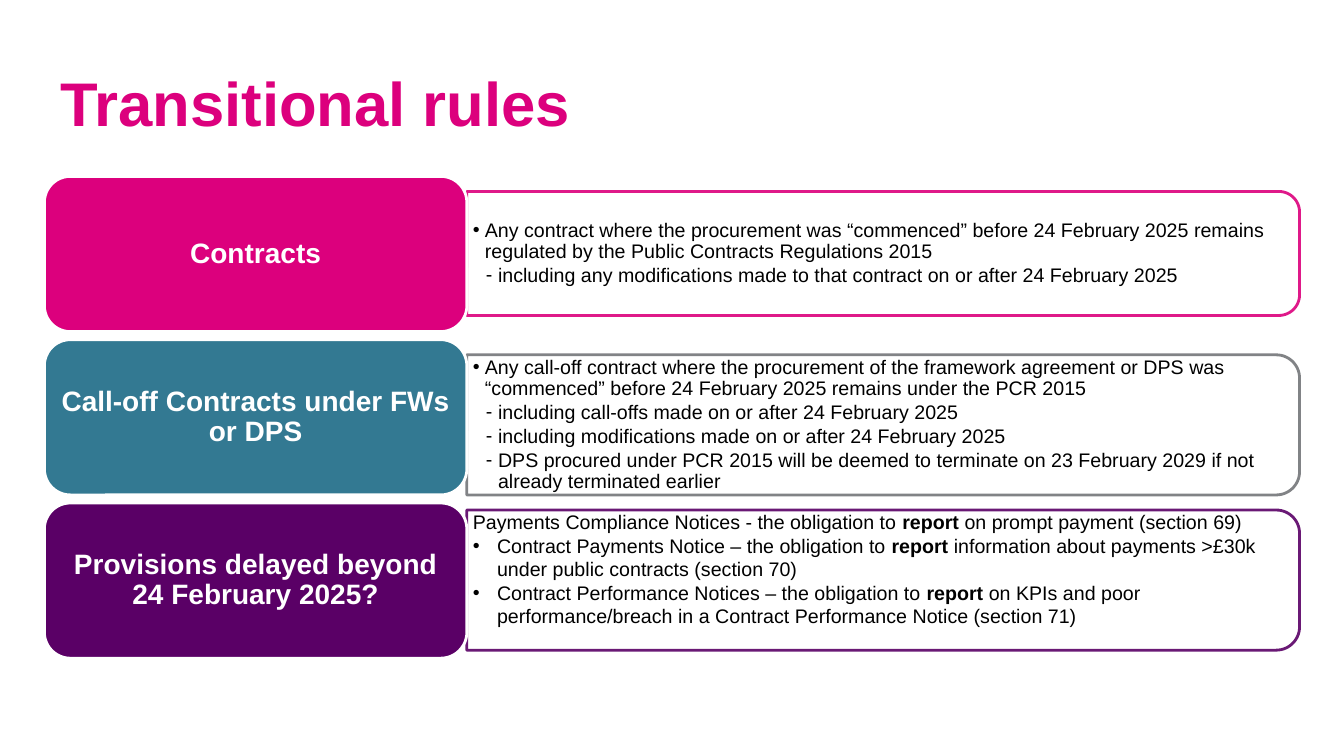
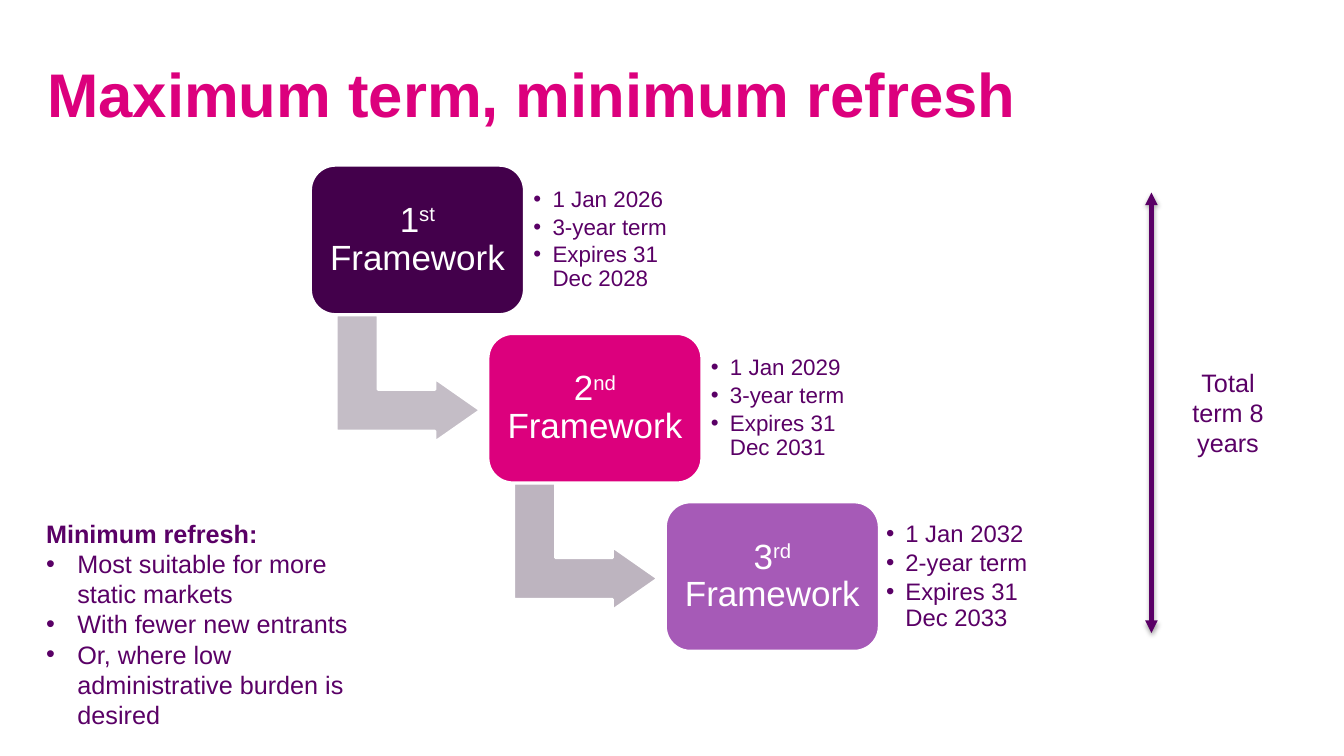
"""Build two slides on transitional rules and framework terms."""
import math

import lxml.etree
import pptx
import pptx.dml.color
import pptx.enum.shapes
import pptx.enum.text
import pptx.oxml.ns
import pptx.util

Inches = pptx.util.Inches
Pt = pptx.util.Pt
RGBColor = pptx.dml.color.RGBColor
SHAPE = pptx.enum.shapes.MSO_SHAPE
ALIGN = pptx.enum.text.PP_ALIGN
ANCHOR = pptx.enum.text.MSO_ANCHOR
qn = pptx.oxml.ns.qn

PINK = RGBColor(0xDC, 0x00, 0x7D)
TEAL = RGBColor(0x33, 0x79, 0x92)
PURPLE = RGBColor(0x5A, 0x00, 0x66)
DARK_PURPLE = RGBColor(0x43, 0x00, 0x4B)
LILAC = RGBColor(0xA6, 0x5A, 0xB7)
GREY = RGBColor(0x74, 0x76, 0x79)
ARROW_GREY = RGBColor(0xC4, 0xBD, 0xC6)
ARROW_MAUVE = RGBColor(0xBD, 0xB4, 0xBF)
WHITE = RGBColor(0xFF, 0xFF, 0xFF)
BLACK = RGBColor(0, 0, 0)

FONT = "Arial"
PLAIN = None
DOT = ("•", 0.12, 0.12)
DASH = ("-", 0.25, 0.12)
WIDE_DOT = ("•", 0.24, 0.24)
TERM_DOT = ("•", 0.19, 0.19)
NOTE_DOT = ("•", 0.31, 0.31)


def set_values(target, values):
    """Set each named attribute of the target."""
    for name, value in values.items():
        setattr(target, name, value)


def add_child(parent, tag, **attributes):
    """Append an XML element and return it."""
    return lxml.etree.SubElement(parent, qn(tag), attributes)


def add_bullet(para, bullet):
    """Give a paragraph a hanging bullet mark."""
    mark, margin, hang = bullet
    properties = para._p.get_or_add_pPr()
    properties.set("marL", str(Inches(margin)))
    properties.set("indent", str(-Inches(hang)))
    add_child(properties, "a:buFont", typeface=FONT)
    add_child(properties, "a:buChar", char=mark)


def write(box, lines, size, color, bold=False, superscript=False,
          insets=(0.1, 0.05, 0.1, 0.05), anchor=ANCHOR.MIDDLE, **layout):
    """Write (text, bullet) lines, with accented spans between bars."""
    frame = box.text_frame
    sides = ("margin_left", "margin_top", "margin_right", "margin_bottom")
    set_values(frame, dict(zip(sides, map(Inches, insets))))
    set_values(frame, {"word_wrap": True, "vertical_anchor": anchor})
    for index, (text, bullet) in enumerate(lines):
        para = frame.add_paragraph() if index else frame.paragraphs[0]
        set_values(para, {"alignment": ALIGN.LEFT, **layout})
        if bullet:
            add_bullet(para, bullet)
        for order, piece in enumerate(text.split("|")):
            if not piece:
                continue
            accented = order % 2 == 1
            span = para.add_run()
            span.text = piece
            set_values(span.font, {
                "name": FONT, "size": Pt(size),
                "bold": bold or (accented and not superscript)})
            span.font.color.rgb = color
            if accented and superscript:
                span._r.get_or_add_rPr().set("baseline", "30000")


def add_text(page, area, lines, size, color, **options):
    """Add a text box."""
    box = page.shapes.add_textbox(*map(Inches, area))
    write(box, lines, size, color, **options)


def add_title(page, text, left, top):
    """Add the slide title."""
    add_text(page, (left, top, 12, 0.84), [(text, PLAIN)], 44, PINK, bold=True)


def add_block(page, kind, area, fill, adjustments):
    """Add a filled shape with a white outline."""
    block = page.shapes.add_shape(kind, *map(Inches, area))
    block.shadow.inherit = False
    block.fill.solid()
    block.fill.fore_color.rgb = fill
    block.line.color.rgb = WHITE
    block.line.width = Pt(2)
    for index, value in enumerate(adjustments):
        block.adjustments[index] = value
    return block


def add_label(page, area, fill, text, size, insets, **options):
    """Add a rounded box with a centred caption."""
    label = add_block(page, SHAPE.ROUNDED_RECTANGLE, area, fill, [0.167])
    write(label, [(text, PLAIN)], size, WHITE, insets=insets,
          alignment=ALIGN.CENTER, line_spacing=0.9, **options)


def add_panel(page, area, color, lines, **options):
    """Add an outlined panel with rounded right corners."""
    left, top, width, height = area
    right, bottom, radius = left + width, top + height, height / 6
    points = [(left, top)]
    for corner, start in ((top + radius, -90), (bottom - radius, 0)):
        for step in range(0, 91, 6):
            angle = math.radians(start + step)
            points.append((right - radius + radius * math.cos(angle),
                           corner + radius * math.sin(angle)))
    points.append((left, bottom))
    points = [(Inches(x), Inches(y)) for x, y in points]
    builder = page.shapes.build_freeform(*points[0])
    builder.add_line_segments(points[1:], close=True)
    panel = builder.convert_to_shape()
    panel.shadow.inherit = False
    panel.fill.background()
    panel.line.color.rgb = color
    panel.line.width = Pt(2)
    outline = panel.element.spPr.find(qn("a:ln"))
    add_child(outline.find(".//" + qn("a:srgbClr")), "a:alpha", val="90000")
    write(panel, lines, 14, BLACK, insets=(0.06, 0, 0.12, 0), **options)


def add_span_arrow(page, x, top, bottom):
    """Add a vertical arrow with two heads and a soft shadow."""
    arrow = page.shapes.add_connector(
        pptx.enum.shapes.MSO_CONNECTOR.STRAIGHT,
        Inches(x), Inches(top), Inches(x), Inches(bottom))
    arrow.line.color.rgb = PURPLE
    arrow.line.width = Pt(3)
    properties = arrow.element.spPr
    outline = properties.find(qn("a:ln"))
    for end in ("a:headEnd", "a:tailEnd"):
        add_child(outline, end, type="triangle")
    shadow = add_child(
        add_child(properties, "a:effectLst"), "a:outerShdw",
        blurRad=str(Pt(3.1)), dist=str(Pt(1.8)), dir="5400000",
        rotWithShape="0")
    tint = add_child(shadow, "a:srgbClr", val="000000")
    add_child(tint, "a:alpha", val="35000")


def build_rules(page):
    """Draw the transitional rules slide."""
    spaced = {"line_spacing": 0.9, "space_after": Pt(2)}
    rules = [
        ("Contracts", PINK, PINK, 1.9, 1.23, [
            ("Any contract where the procurement was “commenced” before 24 February 2025 "
             "remains regulated by the Public Contracts Regulations 2015", DOT),
            ("including any modifications made to that contract on or after "
             "24 February 2025", DASH)], spaced),
        ("Call-off Contracts under FWs or DPS", TEAL, GREY, 3.52, 1.39, [
            ("Any call-off contract where the procurement of the framework agreement or DPS "
             "was “commenced” before 24 February 2025 remains under the PCR 2015", DOT),
            ("including call-offs made on or after 24 February 2025", DASH),
            ("including modifications made on or after 24 February 2025", DASH),
            ("DPS procured under PCR 2015 will be deemed to terminate on 23 February 2029 "
             "if not already terminated earlier", DASH)], spaced),
        ("Provisions delayed beyond 24 February 2025?", PURPLE, PURPLE, 5.06, 1.39, [
            ("Payments Compliance Notices - the obligation to |report| on prompt payment "
             "(section 69)", PLAIN),
            ("Contract Payments Notice – the obligation to |report| information about "
             "payments >£30k under public contracts (section 70)", WIDE_DOT),
            ("Contract Performance Notices – the obligation to |report| on KPIs and poor "
             "performance/breach in a Contract Performance Notice (section 71)", WIDE_DOT)],
         {"anchor": ANCHOR.TOP}),
    ]
    for index, (name, fill, edge, top, height, lines, options) in enumerate(rules):
        add_panel(page, (4.63, top, 8.26, height), edge, lines, **options)
        add_label(page, (0.44, 1.75 + 1.62 * index, 4.19, 1.54), fill, name, 20,
                  (0.09, 0.05, 0.09, 0.05), bold=True)
    add_title(page, "Transitional rules", 0.5, 0.59)


def build_terms(page):
    """Draw the framework terms slide."""
    add_title(page, "Maximum term, minimum refresh", 0.37, 0.5)
    frameworks = [
        ("1|st| Framework", DARK_PURPLE, ARROW_GREY, 16, 0.09,
         ("1 Jan 2026", "3-year term", "Expires 31 Dec 2028")),
        ("2|nd| Framework", PINK, ARROW_MAUVE, 16, 0.09,
         ("1 Jan 2029", "3-year term", "Expires 31 Dec 2031")),
        ("3|rd| Framework", LILAC, None, 17, 0.07,
         ("1 Jan 2032", "2-year term", "Expires 31 Dec 2033")),
    ]
    for index, (name, fill, arrow_fill, size, inset, terms) in enumerate(frameworks):
        left, top = 3.08 + 1.76 * index, 1.64 + 1.67 * index
        if arrow_fill:
            arrow = add_block(page, SHAPE.BENT_UP_ARROW,
                              (left + 0.34, top + 1.4, 1.26, 1.43), arrow_fill,
                              [0.328, 0.25, 0.358])
            arrow.rotation = 90
        add_label(page, (left, top, 2.12, 1.48), fill, name, 25, (0.1,) * 4,
                  superscript=True)
        add_text(page, (left + 2.12, top + 0.14, 1.54, 1.2),
                 [(term, TERM_DOT) for term in terms], size, PURPLE,
                 insets=(inset,) * 4, line_spacing=0.9, space_after=Pt(2.5))
    add_span_arrow(page, 11.42, 1.91, 6.28)
    add_text(page, (11.71, 3.59, 0.94, 1.01), [("Total term 8 years", PLAIN)], 18,
             PURPLE, anchor=ANCHOR.TOP, alignment=ALIGN.CENTER)
    add_text(page, (0.36, 5.09, 3.34, 2.22), [
        ("|Minimum refresh:|", PLAIN),
        ("Most suitable for more static markets", NOTE_DOT),
        ("With fewer new entrants", NOTE_DOT),
        ("Or, where low administrative burden is desired", NOTE_DOT),
    ], 18, PURPLE, anchor=ANCHOR.TOP)


def main():
    """Build and save the deck."""
    deck = pptx.Presentation()
    set_values(deck, {"slide_width": Inches(13.33), "slide_height": Inches(7.5)})
    for build in (build_rules, build_terms):
        build(deck.slides.add_slide(deck.slide_layouts[6]))
    deck.save("out.pptx")


if __name__ == "__main__":
    main()
